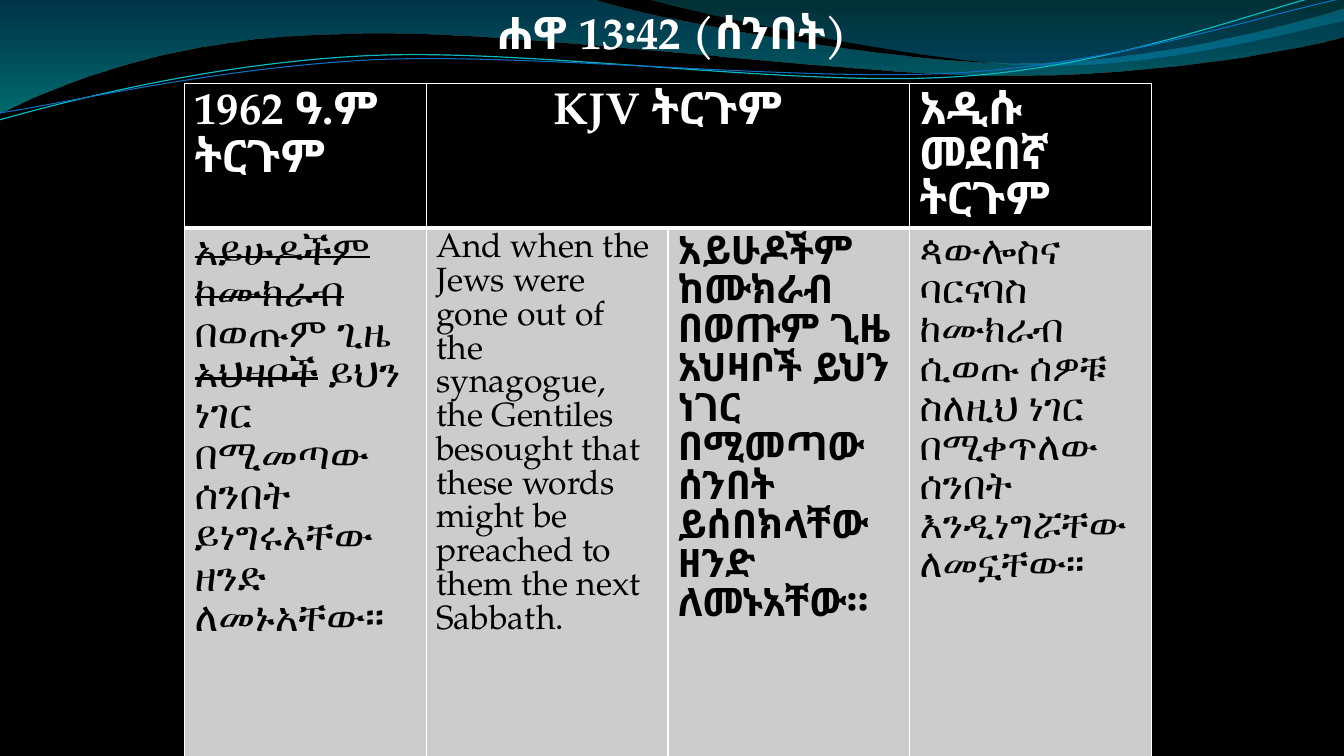
import pptx
import pptx.dml.color
import pptx.enum.lang
import pptx.enum.text
import pptx.oxml
import pptx.oxml.ns
import pptx.util
from pptx.util import Inches

RGBColor = pptx.dml.color.RGBColor
BLACK = RGBColor(0x00, 0x00, 0x00)
WHITE = RGBColor(0xFF, 0xFF, 0xFF)
GREY = RGBColor(0xCC, 0xCC, 0xCC)
AQUA = RGBColor(0x0A, 0xB8, 0xBF)
BLUE = RGBColor(0x0F, 0x6F, 0xC6)
DEEP_BLUE = RGBColor(0x00, 0x74, 0xA1)
CYAN = RGBColor(0x00, 0xC6, 0xCF)
TEAL = RGBColor(0x00, 0xA1, 0xA9)
OCEAN = RGBColor(0x00, 0x8B, 0xBF)
CENTER = pptx.enum.text.PP_ALIGN.CENTER
LEFT = pptx.enum.text.PP_ALIGN.LEFT
AMHARIC = pptx.enum.lang.MSO_LANGUAGE_ID.AMHARIC
ENGLISH = pptx.enum.lang.MSO_LANGUAGE_ID.ENGLISH_US
NAMESPACE = pptx.oxml.ns.nsdecls("a")
qn = pptx.oxml.ns.qn


class VerseSlide:
    font = "TeX Gyre Pagella"

    def __init__(self, presentation):
        self.slide = presentation.slides.add_slide(presentation.slide_layouts[5])
        fill = self.slide.background.fill
        fill.solid()
        fill.fore_color.rgb = BLACK

    def outline(self, pieces, close):
        """Freeform of corners (2 numbers, inches) and Bezier curves (6 numbers)."""
        points = [(Inches(piece[i]), Inches(piece[i + 1]))
                  for piece in pieces for i in range(0, len(piece), 2)]
        builder = self.slide.shapes.build_freeform(*points[0])
        builder.add_line_segments(points[1:], close=close)
        shape = builder.convert_to_shape()
        shape.shadow.inherit = False
        # Join the three points of each curve into one Bezier segment
        segments = iter(list(shape._element.iter(qn("a:lnTo"))))
        for piece in pieces[1:]:
            group = [next(segments) for _ in range(len(piece) // 2)]
            if len(group) == 3:
                bezier = pptx.oxml.parse_xml(f"<a:cubicBezTo {NAMESPACE}/>")
                group[0].addprevious(bezier)
                for segment in group:
                    bezier.append(segment[0])
                    segment.getparent().remove(segment)
        return shape

    def wave(self, pieces, stops):
        """Filled wave; stops are (position %, colour, opacity %)."""
        shape = self.outline(pieces, True)
        shape.line.fill.background()
        shape.fill.solid()
        stop_xml = "".join(
            f'<a:gs pos="{position * 1000}"><a:srgbClr val="{color}">'
            f'<a:alpha val="{opacity * 1000}"/></a:srgbClr></a:gs>'
            for position, color, opacity in stops)
        gradient = pptx.oxml.parse_xml(
            f'<a:gradFill {NAMESPACE}><a:gsLst>{stop_xml}</a:gsLst>'
            '<a:lin ang="5400000" scaled="1"/></a:gradFill>')
        properties = shape._element.spPr
        properties.replace(properties.find(qn("a:solidFill")), gradient)

    def curve(self, pieces, color, width):
        shape = self.outline(pieces, False)
        shape.fill.background()
        shape.line.color.rgb = color
        shape.line.width = pptx.util.Pt(width)

    def format(self, paragraph, size, color, bold, align, language=AMHARIC):
        paragraph.alignment = align
        for run in paragraph.runs:
            run.font.name = self.font
            run.font.size = pptx.util.Pt(size)
            run.font.color.rgb = color
            run.font.bold = bold
            run.font.language_id = language

    def title(self, text):
        shape = self.slide.shapes.title
        shape.left, shape.top = Inches(1.67), Inches(0)
        shape.width, shape.height = Inches(10), Inches(0.8)
        frame = shape.text_frame
        frame.text = text
        frame.vertical_anchor = pptx.enum.text.MSO_ANCHOR.TOP
        self.format(frame.paragraphs[0], 32, WHITE, True, CENTER)
        frame.paragraphs[0].space_before = pptx.util.Pt(6.4)
        self.slide.shapes._spTree.append(shape._element)  # in front of the waves

    def table(self, left, top, width, heights):
        frame = self.slide.shapes.add_table(
            len(heights), 4, Inches(left), Inches(top), Inches(width), Inches(sum(heights)))
        table = frame.table
        table.horz_banding = False
        for row, height in zip(table.rows, heights):
            row.height = Inches(height)
        self.borders(table)
        return table

    def borders(self, table):
        """White 1 pt grid with a 3 pt rule between header and verses."""
        for row_index, row in enumerate(table.rows):
            sides = {"L": 1, "R": 1, "T": 1 if row_index == 0 else 3,
                     "B": 3 if row_index == 0 else 1}
            for cell in row.cells:
                properties = cell._tc.get_or_add_tcPr()
                for index, (side, width) in enumerate(sides.items()):
                    properties.insert(index, pptx.oxml.parse_xml(
                        f'<a:ln{side} {NAMESPACE} w="{width * 12700}"><a:solidFill>'
                        f'<a:srgbClr val="{WHITE}"/></a:solidFill></a:ln{side}>'))

    def cell(self, cell, parts, size, color, fill, bold=False, align=LEFT, language=AMHARIC):
        """Cell text from (text, struck through) parts."""
        cell.fill.solid()
        cell.fill.fore_color.rgb = fill
        paragraph = cell.text_frame.paragraphs[0]
        for text, struck in parts:
            run = paragraph.add_run()
            run.text = text
            if struck:
                run.font._element.set("strike", "sngStrike")
        self.format(paragraph, size, color, bold, align, language)


def main():
    presentation = pptx.Presentation()
    presentation.slide_width, presentation.slide_height = Inches(13.33), Inches(7.5)
    verse = VerseSlide(presentation)

    # Waves along the top
    verse.wave(
        [(0, 0), (5.87, -0.01), (6.34, 0.17, 8.85, 0.63, 10.11, 0.63),
         (11.38, 0.63, 12.78, 0.26, 13.33, 0.09), (13.35, 0.36),
         (13.11, 0.44, 11.6, 0.76, 9.94, 0.75), (8.29, 0.75, 5.09, 0.28, 3.43, 0.34),
         (1.72, 0.36, 0.61, 0.83, -0.01, 1.13)],
        [(0, DEEP_BLUE, 45), (100, CYAN, 55)])
    verse.wave(
        [(6.39, -0.01), (6.79, 0.11, 9.09, 0.62, 10.25, 0.65),
         (11.41, 0.69, 12.82, 0.32, 13.33, 0.21), (13.33, 0)],
        [(0, TEAL, 30), (80, OCEAN, 45)])
    verse.curve(
        [(-0.01, 1.19), (0.64, 1.01, 2.11, 0.62, 3.69, 0.55),
         (5.27, 0.48, 7.9, 0.87, 9.5, 0.76), (11.1, 0.66, 12.52, 0.08, 13.31, -0.1)],
        AQUA, 0.85)
    verse.curve(
        [(0, 1.12), (0.63, 1.03, 2.18, 0.66, 3.78, 0.59),
         (5.37, 0.53, 7.96, 0.82, 9.55, 0.72), (11.15, 0.62, 12.55, 0.14, 13.34, -0.02)],
        BLUE, 0.75)

    # Verse reference
    verse.title("ሐዋ 13፡42 (ሰንበት)")

    # Comparison of translations
    table = verse.table(1.83, 0.83, 9.59, (1.24, 5.26))
    table.cell(0, 1).merge(table.cell(0, 2))
    headers = [(0, "1962 ዓ.ም ትርጉም", LEFT), (1, "KJV ትርጉም", CENTER),
               (3, "አዲሱ መደበኛ ትርጉም", LEFT)]
    for column, text, align in headers:
        verse.cell(table.cell(0, column), [(text, False)], 32, WHITE, BLACK, True, align)

    verses = [
        ([("አይሁዶችም ከሙክራብ ", True), ("በወጡም ጊዜ ", False), ("አህዛቦች", True),
          (" ይህን ነገር በሚመጣው ሰንበት ይነግሩአቸው ዘንድ ለመኑአቸው።", False)], 29, False, AMHARIC),
        ([("And when the Jews were gone out of the synagogue, the Gentiles besought "
           "that these words might be preached to them the next Sabbath.", False)],
         24, False, ENGLISH),
        ([("አይሁዶችም ከሙክራብ በወጡም ጊዜ አህዛቦች ይህን ነገር በሚመጣው ሰንበት "
           "ይሰበክላቸው ዘንድ ለመኑአቸው።", False)], 28, True, AMHARIC),
        ([("ጳውሎስና ባርናባስ ከሙክራብ ሲወጡ ሰዎቹ ስለዚህ ነገር በሚቀጥለው ሰንበት "
           "እንዲነግሯቸው ለመኗቸው።", False)], 28, False, AMHARIC),
    ]
    for column, (parts, size, bold, language) in enumerate(verses):
        verse.cell(table.cell(1, column), parts, size, BLACK, GREY, bold, LEFT, language)

    presentation.save("out.pptx")


if __name__ == "__main__":
    main()
